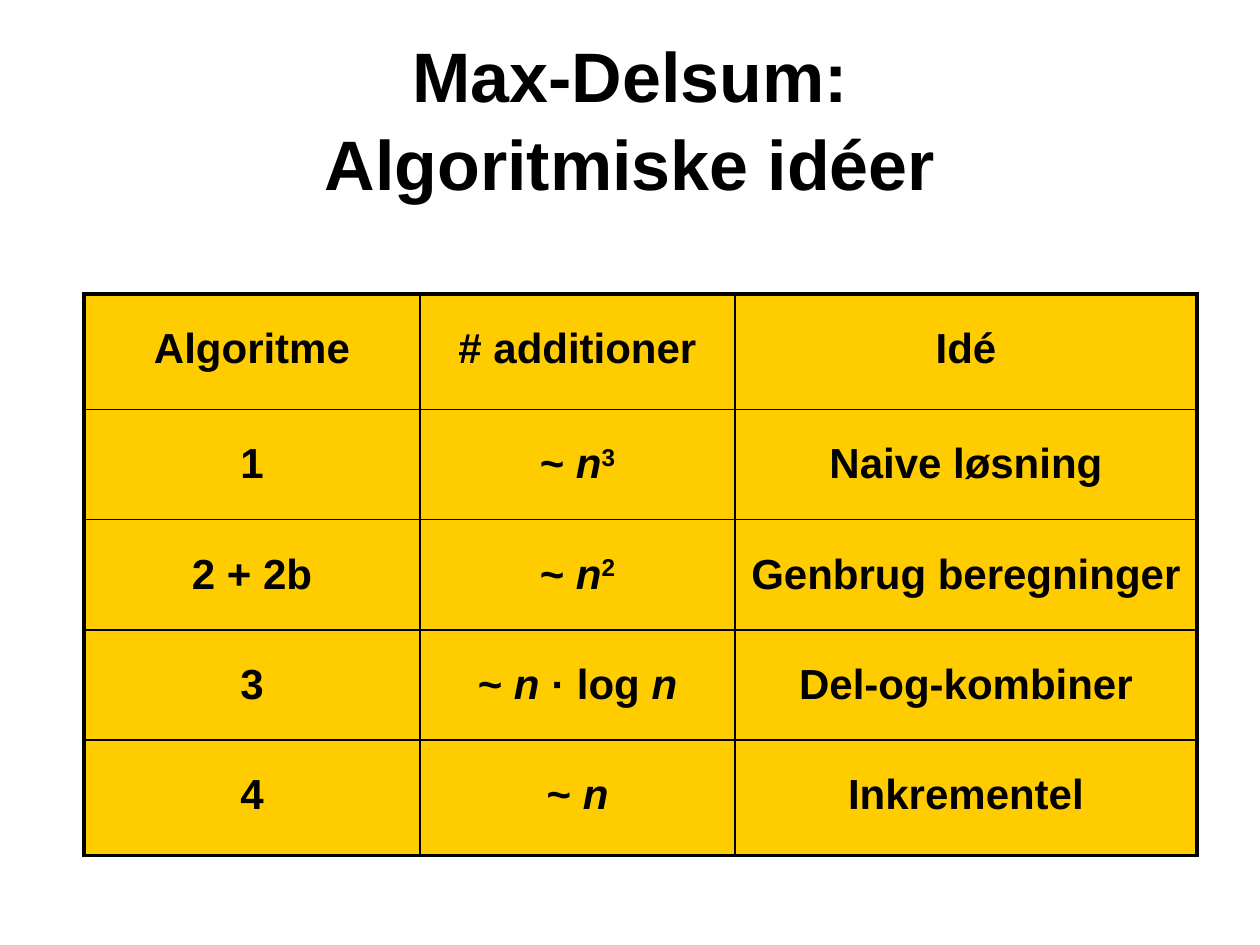
from dataclasses import dataclass, field

from lxml.etree import SubElement
from pptx import Presentation
from pptx.dml.color import RGBColor
from pptx.enum.text import MSO_ANCHOR, MSO_AUTO_SIZE, PP_ALIGN
from pptx.oxml.ns import qn
from pptx.slide import Slide
from pptx.util import Inches, Pt

BLACK = RGBColor(0x00, 0x00, 0x00)
GOLD = RGBColor(0xFF, 0xCC, 0x00)

PLAIN, ITALIC, RAISED = {}, {"italic": True}, {"raised": True}

# Table content: a cell is a string, or a list of (text, style) spans
HEADER = ["Algoritme", "# additioner", "Idé"]
ALGORITHMS = [
    ["1", [("~ ", PLAIN), ("n", ITALIC), ("3", RAISED)], "Naive løsning"],
    ["2 + 2b", [("~ ", PLAIN), ("n", ITALIC), ("2", RAISED)], "Genbrug beregninger"],
    ["3", [("~ ", PLAIN), ("n ", ITALIC), ("· log ", PLAIN), ("n", ITALIC)],
     "Del-og-kombiner"],
    ["4", [("~ ", PLAIN), ("n", ITALIC)], "Inkrementel"],
]


def grid(units):
    """Length on a grid with six units to the inch (60 columns, 45 rows)."""
    return Inches(units / 6)


def apply(target, values):
    for name, value in values.items():
        setattr(target, name, value)


@dataclass
class SlideBuilder:
    page: Slide
    font: str = "Arial"
    outer: float = 2.25
    inner: float = 1
    cell_format: dict = field(default_factory=lambda: {
        "margin_left": Inches(0.1), "margin_top": Inches(0.25),
        "margin_right": Inches(0.1), "margin_bottom": Inches(0.05),
        "vertical_anchor": MSO_ANCHOR.TOP})

    def style(self, font, size, italic=False, raised=False):
        apply(font, {"name": self.font, "size": Pt(size), "bold": True, "italic": italic})
        font.color.rgb = BLACK
        if raised:
            font._element.set("baseline", "30000")

    def title(self, text, left, top, width, height, size):
        box = self.page.shapes.title
        apply(box, {"left": grid(left), "top": grid(top),
                    "width": grid(width), "height": grid(height)})
        frame = box.text_frame
        apply(frame, {"text": text, "word_wrap": True, "auto_size": MSO_AUTO_SIZE.NONE,
                      "vertical_anchor": MSO_ANCHOR.MIDDLE})
        para = frame.paragraphs[0]
        apply(para, {"alignment": PP_ALIGN.CENTER, "line_spacing": 1.05})
        for span in para.runs:
            self.style(span.font, size)

    def border(self, cell, widths):
        properties = cell._tc.get_or_add_tcPr()
        for index, (side, width) in enumerate(widths.items()):
            line = properties.makeelement(qn(f"a:{side}"), {"w": str(Pt(width))})
            fill = SubElement(line, qn("a:solidFill"))
            SubElement(fill, qn("a:srgbClr"), val=str(BLACK))
            properties.insert(index, line)

    def cell(self, cell, content, size):
        apply(cell, self.cell_format)
        cell.fill.solid()
        cell.fill.fore_color.rgb = GOLD
        para = cell.text_frame.paragraphs[0]
        para.alignment = PP_ALIGN.CENTER
        spans = [(content, PLAIN)] if isinstance(content, str) else content
        for text, look in spans:
            span = para.add_run()
            span.text = text
            self.style(span.font, size, **look)

    def table(self, rows, left, top, widths, heights, size):
        last_row, last_column = len(heights) - 1, len(widths) - 1
        table = self.page.shapes.add_table(
            len(heights), len(widths), grid(left), grid(top),
            grid(sum(widths)), grid(sum(heights))).table
        for column, width in zip(table.columns, widths):
            column.width = grid(width)
        for row, height in zip(table.rows, heights):
            row.height = grid(height)
        for r, row in enumerate(rows):
            for c, content in enumerate(row):
                cell = table.cell(r, c)
                self.cell(cell, content, size)
                # Thick frame around the table, thin lines within
                edges = {"lnL": c == 0, "lnR": c == last_column,
                         "lnT": r == 0, "lnB": r == last_row}
                self.border(cell, {side: self.outer if at_edge else self.inner
                                   for side, at_edge in edges.items()})


def main():
    deck = Presentation()
    apply(deck, {"slide_width": grid(60), "slide_height": grid(45)})
    title_only = deck.slide_layouts[5]
    builder = SlideBuilder(deck.slides.add_slide(title_only))

    # Heading
    builder.title("Max-Delsum:\vAlgoritmiske idéer", 3, 1.8, 54, 7.5, size=40)

    # Algorithms with their cost and idea
    builder.table([HEADER, *ALGORITHMS], 4, 14, widths=[16, 15, 22],
                  heights=[5.5, 5.25, 5.25, 5.25, 5.5], size=24)

    deck.save("out.pptx")


if __name__ == "__main__":
    main()
